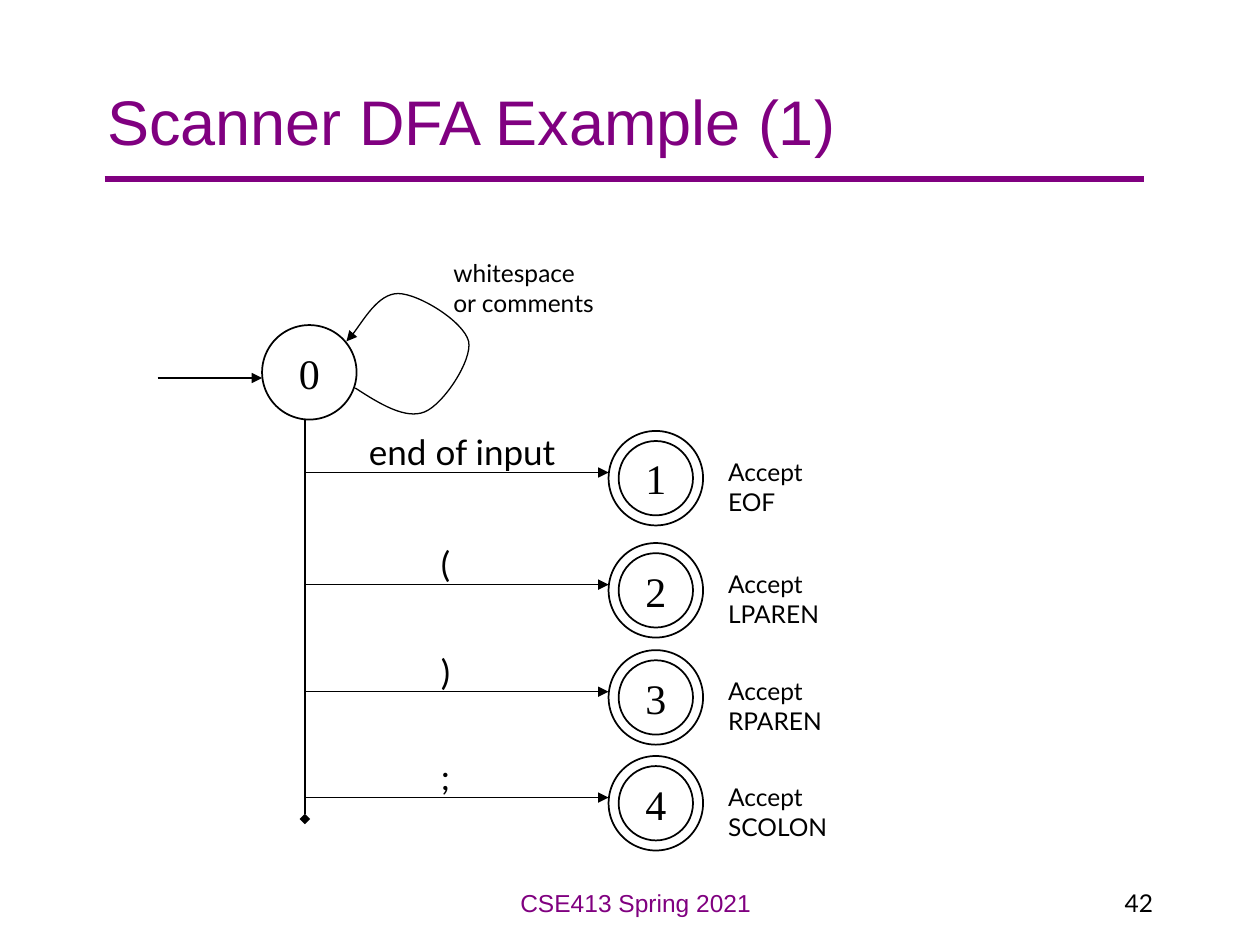
from lxml.etree import SubElement
from pptx import Presentation
from pptx.dml.color import RGBColor
from pptx.enum.shapes import MSO_CONNECTOR, MSO_SHAPE
from pptx.enum.text import MSO_ANCHOR as Anchor, PP_ALIGN as Align
from pptx.oxml.ns import qn
from pptx.util import Inches, Pt

PURPLE = RGBColor(0x80, 0x00, 0x80)
BLACK = RGBColor(0x00, 0x00, 0x00)

TRUNK_X = 2.42
STATE_X = 4.83
STATE_SIZE = 0.75
RING_GAP = 0.08

# Arrow height, input, left and width of its label, state, accepted token
TRANSITIONS = [
    (3.75, "end of input", 2.83, 1.7, "1", "EOF"),
    (4.64, "(", 3.4, 0.31, "2", "LPAREN"),
    (5.49, ")", 3.4, 0.31, "3", "RPAREN"),
    (6.33, ";", 3.4, 0.31, "4", "SCOLON"),
]

# Start point, then three control points for each curve
LOOP = [
    (2.82, 3.08),
    (3.02, 3.21), (3.22, 3.33), (3.37, 3.27),
    (3.52, 3.21), (3.75, 2.86), (3.72, 2.71),
    (3.68, 2.55), (3.32, 2.33), (3.16, 2.33),
    (3.00, 2.33), (2.82, 2.65), (2.75, 2.71),
]


def format_text(frame, text, size, font="Lato", color=BLACK, align=Align.LEFT):
    frame.text = text
    paragraph = frame.paragraphs[0]
    paragraph.alignment = align
    paragraph.font.size = Pt(size)
    paragraph.font.name = font
    paragraph.font.color.rgb = color


def add_text(slide, left, top, width, height, text, size, **style):
    box = slide.shapes.add_textbox(*map(Inches, (left, top, width, height)))
    box.text_frame.word_wrap = True
    format_text(box.text_frame, text, size, **style)


def style_line(shape, width, color=BLACK, arrowhead=None):
    shape.line.color.rgb = color
    shape.line.width = Pt(width)
    if arrowhead:
        outline = shape.line._get_or_add_ln()
        SubElement(outline, qn("a:tailEnd"), type=arrowhead)


def add_line(slide, start, end, width, color=BLACK, arrowhead=None):
    line = slide.shapes.add_connector(
        MSO_CONNECTOR.STRAIGHT, *map(Inches, (*start, *end)))
    style_line(line, width, color, arrowhead)
    SubElement(line._element.spPr, qn("a:effectLst"))


def add_circle(shapes, left, top, size, text=""):
    circle = shapes.add_shape(
        MSO_SHAPE.OVAL, *map(Inches, (left, top, size, size)))
    circle.shadow.inherit = False
    circle.fill.background()
    style_line(circle, 1)
    if text:
        frame = circle.text_frame
        frame.word_wrap = False
        frame.vertical_anchor = Anchor.MIDDLE
        format_text(frame, text, 24, "Times New Roman", align=Align.CENTER)


def add_accepting_state(slide, left, top, text):
    group = slide.shapes.add_group_shape()
    add_circle(group.shapes, left, top, STATE_SIZE)
    add_circle(group.shapes, left + RING_GAP, top + RING_GAP,
               STATE_SIZE - 2 * RING_GAP, text)


def add_curve(slide, points, width, arrowhead):
    builder = slide.shapes.build_freeform(*points[0], scale=Inches(1) / 1.0)
    builder.add_line_segments(points[1:], close=False)
    curve = builder.convert_to_shape()
    curve.shadow.inherit = False
    curve.fill.background()
    style_line(curve, width, arrowhead=arrowhead)
    # Rebuild the path at a fine scale, with cubic curves
    path = curve._element.find(".//" + qn("a:path"))
    path.set("w", str(curve.width))
    path.set("h", str(curve.height))
    for segment in list(path):
        path.remove(segment)

    def add_points(command, command_points):
        segment = SubElement(path, qn(command))
        for x, y in command_points:
            SubElement(segment, qn("a:pt"), x=str(Inches(x) - curve.left),
                       y=str(Inches(y) - curve.top))

    add_points("a:moveTo", points[:1])
    for index in range(1, len(points), 3):
        add_points("a:cubicBezTo", points[index:index + 3])


def add_title(slide, text):
    title = slide.shapes.title
    title.left, title.top = Inches(0.75), Inches(0.33)
    title.width, title.height = Inches(8.5), Inches(1.25)
    title.text_frame.vertical_anchor = Anchor.MIDDLE
    format_text(title.text_frame, text, 36, "Arial", PURPLE)
    add_line(slide, (0.83, 1.42), (9.08, 1.42), 3, PURPLE)


def add_transition(slide, y, symbol, label_left, label_width, state, token):
    add_line(slide, (TRUNK_X, y), (STATE_X, y), 0.75, arrowhead="triangle")
    add_text(slide, label_left, y - 0.38, label_width, 0.44, symbol, 20)
    add_accepting_state(slide, STATE_X, y - 0.33, state)
    add_text(slide, 5.68, y - 0.17, 1.1, 0.57, f"Accept {token}", 14)


def main():
    presentation = Presentation()
    presentation.slide_width = Inches(10)
    presentation.slide_height = Inches(7.5)
    slide = presentation.slides.add_slide(presentation.slide_layouts[5])
    add_title(slide, "Scanner DFA Example (1)")

    # Start state with its loop
    add_circle(slide.shapes, 2.08, 2.58, STATE_SIZE, "0")
    add_line(slide, (1.25, 3), (2.08, 3), 1, arrowhead="triangle")
    add_curve(slide, LOOP, 0.75, "triangle")
    add_text(slide, 3.5, 2, 1.36, 0.57, "whitespace\vor comments", 14)

    # Trunk and its branches
    add_line(slide, (TRUNK_X, 3.33), (TRUNK_X, 6.5), 0.75, arrowhead="diamond")
    for transition in TRANSITIONS:
        add_transition(slide, *transition)

    # Footer
    add_text(slide, 3.17, 7, 3.75, 0.5, "CSE413 Spring 2021", 14,
             font="Arial", color=PURPLE, align=Align.CENTER)
    add_text(slide, 7.17, 7, 2.08, 0.5, "42", 14, align=Align.RIGHT)

    presentation.save("out.pptx")


if __name__ == "__main__":
    main()
